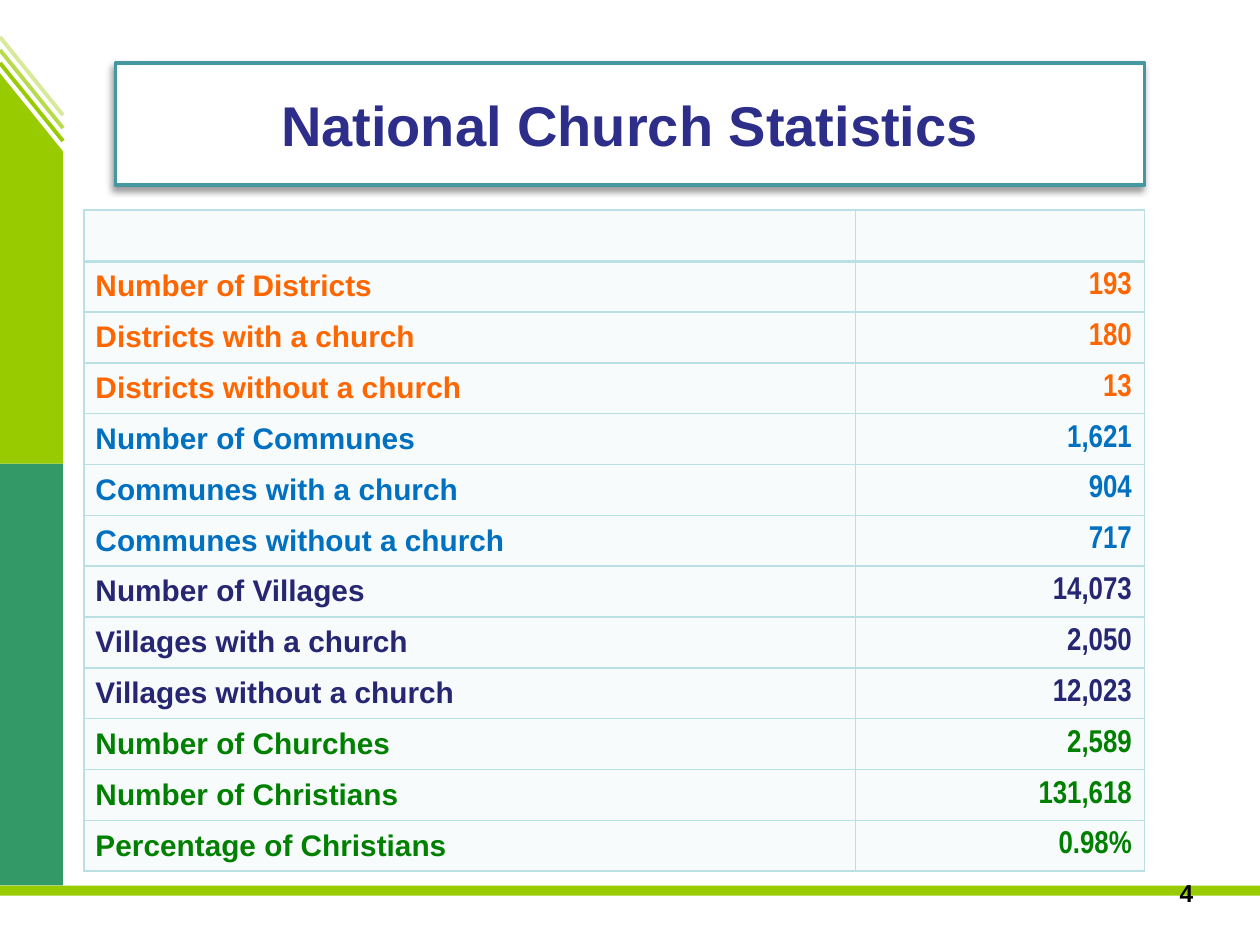
"""Build a slide with a table of national church statistics."""

from typing import NamedTuple

from lxml.etree import SubElement
from pptx import Presentation
from pptx.dml.color import RGBColor
from pptx.enum.shapes import MSO_CONNECTOR, MSO_SHAPE
from pptx.enum.text import MSO_ANCHOR, PP_ALIGN
from pptx.oxml import parse_xml
from pptx.oxml.ns import nsdecls, qn
from pptx.util import Pt

COLORS = {
    "white": "FFFFFF",
    "black": "000000",
    "lime": "99CC00",
    "green": "339966",
    "cell": "F8FBFC",
    "border": "BBE0E3",
    "frame": "4597A0",
    "title": "2D2D8A",
    "districts": "FF6600",
    "communes": "0070C0",
    "villages": "262673",
    "christians": "008000",
}


class Bar(NamedTuple):
    kind: MSO_SHAPE
    left: float
    top: float
    width: float
    height: float
    color: str


class Stripe(NamedTuple):
    top: float
    opacity: int


class Statistic(NamedTuple):
    label: str
    value: str
    color: str


BARS = [
    Bar(MSO_SHAPE.RECTANGLE, 0, 265, 36, 241, "green"),
    Bar(MSO_SHAPE.FLOWCHART_MANUAL_INPUT, 0, 41.8, 36, 223.2, "lime"),
    Bar(MSO_SHAPE.RECTANGLE, 0, 506, 720, 5.8, "lime"),
]
STRIPES = [Stripe(36, 100), Stripe(28.6, 70), Stripe(21.2, 40)]
STATISTICS = [
    Statistic("Number of Districts", "193", "districts"),
    Statistic("Districts with a church", "180", "districts"),
    Statistic("Districts without a church", "13", "districts"),
    Statistic("Number of Communes", "1,621", "communes"),
    Statistic("Communes with a church", "904", "communes"),
    Statistic("Communes without a church", "717", "communes"),
    Statistic("Number of Villages", "14,073", "villages"),
    Statistic("Villages with a church", "2,050", "villages"),
    Statistic("Villages without a church", "12,023", "villages"),
    Statistic("Number of Churches", "2,589", "christians"),
    Statistic("Number of Christians", "131,618", "christians"),
    Statistic("Percentage of Christians", "0.98%", "christians"),
]


def rgb(name: str) -> RGBColor:
    return RGBColor.from_string(COLORS[name])


def write(text_frame, text: str, size: float, color: str, align: PP_ALIGN, font: str = "Arial") -> None:
    text_frame.text = text
    paragraph = text_frame.paragraphs[0]
    paragraph.alignment = align
    for run in paragraph.runs:
        run.font.name = font
        run.font.size = Pt(size)
        run.font.bold = True
        run.font.color.rgb = rgb(color)


def add_bar(slide, bar: Bar) -> None:
    shape = slide.shapes.add_shape(bar.kind, Pt(bar.left), Pt(bar.top), Pt(bar.width), Pt(bar.height))
    shape.shadow.inherit = False
    shape.fill.solid()
    shape.fill.fore_color.rgb = rgb(bar.color)
    shape.line.fill.background()
    if bar.kind == MSO_SHAPE.FLOWCHART_MANUAL_INPUT:
        shape.element.spPr.find(qn("a:xfrm")).set("flipH", "1")


def add_stripe(slide, stripe: Stripe) -> None:
    connector = slide.shapes.add_connector(
        MSO_CONNECTOR.STRAIGHT, Pt(0), Pt(stripe.top), Pt(36), Pt(stripe.top + 44.6)
    )
    connector.line.color.rgb = rgb("lime")
    connector.line.width = Pt(2.25)
    properties = connector.element.spPr
    if stripe.opacity < 100:
        color = properties.find(".//" + qn("a:srgbClr"))
        SubElement(color, qn("a:alpha")).set("val", str(stripe.opacity * 1000))
    SubElement(properties, qn("a:effectLst"))


def format_title(title) -> None:
    title.left, title.top, title.width, title.height = Pt(66), Pt(36), Pt(588), Pt(69.8)
    properties = title.element.spPr
    geometry = parse_xml(f'<a:prstGeom {nsdecls("a")} prst="roundRect"><a:avLst/></a:prstGeom>')
    properties.find(qn("a:xfrm")).addnext(geometry)
    title.fill.solid()
    title.fill.fore_color.rgb = rgb("white")
    title.line.color.rgb = rgb("frame")
    title.line.width = Pt(2)
    properties.append(parse_xml(
        f'<a:effectLst {nsdecls("a")}><a:outerShdw blurRad="{Pt(4)}" dist="{Pt(3)}" dir="8100000"'
        f' algn="tr" rotWithShape="0"><a:srgbClr val="{COLORS["black"]}"><a:alpha val="40000"/>'
        '</a:srgbClr></a:outerShdw></a:effectLst>'
    ))
    title.text_frame.vertical_anchor = MSO_ANCHOR.MIDDLE
    write(title.text_frame, "National Church Statistics", 32, "title", PP_ALIGN.CENTER)


def format_cell(cell, top: float = 1, bottom: float = 1) -> None:
    cell.vertical_anchor = MSO_ANCHOR.MIDDLE
    properties = cell._tc.get_or_add_tcPr()
    for side, width in {"L": 1, "R": 1, "T": top, "B": bottom}.items():
        properties.append(parse_xml(
            f'<a:ln{side} {nsdecls("a")} w="{Pt(width)}"><a:solidFill>'
            f'<a:srgbClr val="{COLORS["border"]}"/></a:solidFill></a:ln{side}>'
        ))
    cell.fill.solid()
    cell.fill.fore_color.rgb = rgb("cell")


def add_statistics(slide, statistics: list[Statistic]) -> None:
    row_count = len(statistics) + 1
    table = slide.shapes.add_table(row_count, 2, Pt(48), Pt(120), Pt(606), Pt(378)).table
    table.horz_banding = False
    for column, width in zip(table.columns, (441, 165)):
        column.width = Pt(width)
    for row in table.rows:
        row.height = Pt(378 / row_count)
    for cell in table.rows[0].cells:
        format_cell(cell, bottom=2)
    for index, statistic in enumerate(statistics, start=1):
        label, value = table.rows[index].cells
        for cell in (label, value):
            format_cell(cell, top=2 if index == 1 else 1)
        label.margin_left = label.margin_right = Pt(6.6)
        write(label.text_frame, statistic.label, 17, statistic.color, PP_ALIGN.LEFT)
        write(value.text_frame, statistic.value, 18, statistic.color, PP_ALIGN.RIGHT, "Arial Narrow")


def add_page_number(slide, number: str) -> None:
    text_box = slide.shapes.add_textbox(Pt(642), Pt(498), Pt(47), Pt(30))
    text_box.text_frame.word_wrap = True
    write(text_box.text_frame, number, 14, "black", PP_ALIGN.RIGHT)


def main() -> None:
    presentation = Presentation()
    presentation.slide_width, presentation.slide_height = Pt(720), Pt(540)
    slide = presentation.slides.add_slide(presentation.slide_layouts[5])
    for bar in BARS:
        add_bar(slide, bar)
    for stripe in STRIPES:
        add_stripe(slide, stripe)
    add_statistics(slide, STATISTICS)
    add_page_number(slide, "4")
    format_title(slide.shapes.title)
    presentation.save("out.pptx")


if __name__ == "__main__":
    main()
